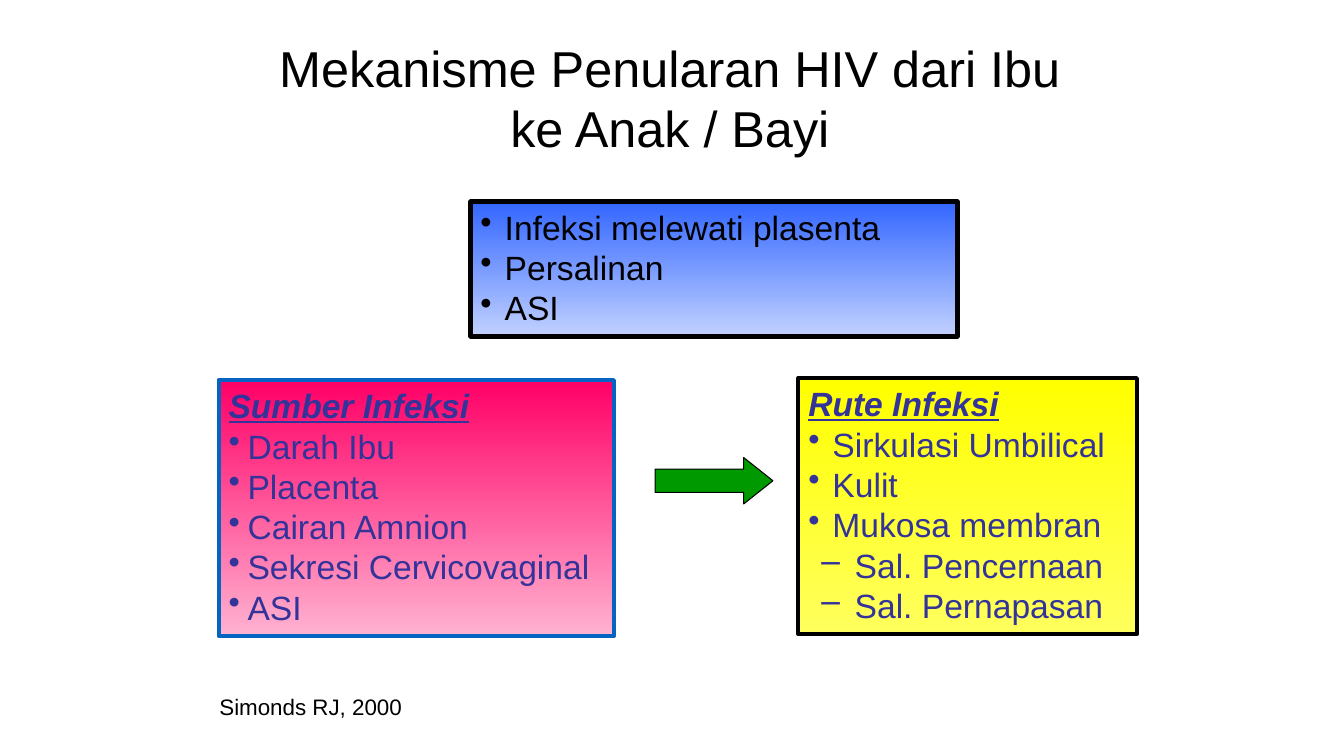
from dataclasses import dataclass

from lxml import etree
from pptx import Presentation
from pptx import util as u
from pptx.dml.color import RGBColor
from pptx.enum import shapes, text
from pptx.oxml import ns


@dataclass(frozen=True)
class Theme:
    font: str = "Arial"
    title_size: int = 36
    body_size: int = 24
    source_size: int = 16
    black: str = "000000"
    indigo: str = "333399"
    blue: str = "0563C1"
    green: str = "009900"
    pink_fade: tuple[str, str] = ("FF0066", "FFB2D1")
    yellow_fade: tuple[str, str] = ("FFFF00", "FFFF5E")
    blue_fade: tuple[str, str] = ("3366FF", "C1D1FF")


@dataclass(frozen=True)
class Frame:
    left: float
    top: float
    width: float
    height: float

    def lengths(self) -> list[u.Cm]:
        return [u.Cm(value) for value in (self.left, self.top, self.width, self.height)]


@dataclass(frozen=True)
class Panel:
    frame: Frame
    fade: tuple[str, str]
    border: str
    color: str
    hanging: float
    items: list[str]
    heading: str = ""
    subitems: tuple[str, ...] = ()


@dataclass(frozen=True)
class Label:
    frame: Frame
    words: str
    size: int
    alignment: text.PP_ALIGN


THEME = Theme()

PANELS = [
    Panel(Frame(5.51, 9.58, 9.96, 6.45), THEME.pink_fade, THEME.blue, THEME.indigo, 0.48,
          ["Darah Ibu", "Placenta", "Cairan Amnion", "Sekresi Cervicovaginal", "ASI"],
          "Sumber Infeksi"),
    Panel(Frame(20.12, 9.53, 8.53, 6.45), THEME.yellow_fade, THEME.black, THEME.indigo, 0.61,
          ["Sirkulasi Umbilical", "Kulit", "Mukosa membran"],
          "Rute Infeksi", ("Sal. Pencernaan", "Sal. Pernapasan")),
    Panel(Frame(11.86, 5.08, 12.27, 3.4), THEME.blue_fade, THEME.black, THEME.black, 0.61,
          ["Infeksi melewati plasenta", "Persalinan", "ASI"]),
]

LABELS = [
    Label(Frame(6.6, 0.81, 20.57, 3.3), "Mekanisme Penularan HIV dari Ibu ke Anak / Bayi",
          THEME.title_size, text.PP_ALIGN.CENTER),
    Label(Frame(5.28, 17.35, 12.7, 0.94), "Simonds RJ, 2000",
          THEME.source_size, text.PP_ALIGN.LEFT),
]


def style_paragraph(paragraph, size: int, color: str, alignment=text.PP_ALIGN.LEFT) -> None:
    paragraph.alignment = alignment
    font = paragraph.font
    font.name = THEME.font
    font.size = u.Pt(size)
    font.color.rgb = RGBColor.from_string(color)


def set_bullet(paragraph, character: str, margin: float, hanging: float) -> None:
    properties = paragraph._p.get_or_add_pPr()
    properties.set("marL", str(u.Cm(margin)))
    properties.set("indent", str(-u.Cm(hanging)))
    bullet = etree.Element(ns.qn("a:buChar"), char=character)
    properties.insert(0, bullet)


def draw_panel(slide, panel: Panel) -> None:
    shape = slide.shapes.add_shape(shapes.MSO_SHAPE.RECTANGLE, *panel.frame.lengths())
    shape.shadow.inherit = False
    shape.fill.gradient()
    shape.fill.gradient_angle = 270
    for stop, color in zip(shape.fill.gradient_stops, panel.fade):
        stop.color.rgb = RGBColor.from_string(color)
        stop.position = panel.fade.index(color)
    shape.line.color.rgb = RGBColor.from_string(panel.border)
    shape.line.width = u.Pt(3)

    frame = shape.text_frame
    frame.word_wrap = True
    frame.vertical_anchor = text.MSO_ANCHOR.TOP
    headings = [panel.heading] if panel.heading else []
    frame.text = "\n".join([*headings, *panel.items, *panel.subitems])
    first_subitem = len(headings) + len(panel.items)
    for index, paragraph in enumerate(frame.paragraphs):
        style_paragraph(paragraph, THEME.body_size, panel.color)
        if index < len(headings):
            font = paragraph.font
            font.bold = font.italic = font.underline = True
        elif index < first_subitem:
            set_bullet(paragraph, "•", panel.hanging, panel.hanging)
        else:
            paragraph.level = 1
            set_bullet(paragraph, "–", 1.17, 0.84)


def draw_label(slide, label: Label) -> None:
    box = slide.shapes.add_textbox(*label.frame.lengths())
    box.text_frame.word_wrap = True
    paragraph = box.text_frame.paragraphs[0]
    paragraph.text = label.words
    style_paragraph(paragraph, label.size, THEME.black, label.alignment)


def draw_arrow(slide, frame: Frame) -> None:
    arrow = slide.shapes.add_shape(shapes.MSO_SHAPE.RIGHT_ARROW, *frame.lengths())
    arrow.shadow.inherit = False
    arrow.adjustments[1] = 0.63
    arrow.fill.solid()
    arrow.fill.fore_color.rgb = RGBColor.from_string(THEME.green)
    arrow.line.color.rgb = RGBColor.from_string(THEME.black)
    arrow.line.width = u.Pt(0.75)


def main() -> None:
    presentation = Presentation()
    presentation.slide_width = u.Cm(33.87)
    presentation.slide_height = u.Cm(19.05)
    slide = presentation.slides.add_slide(presentation.slide_layouts[6])
    for panel in PANELS:
        draw_panel(slide, panel)
    draw_arrow(slide, Frame(16.51, 11.53, 2.97, 1.17))
    for label in LABELS:
        draw_label(slide, label)
    presentation.save("out.pptx")


if __name__ == "__main__":
    main()
